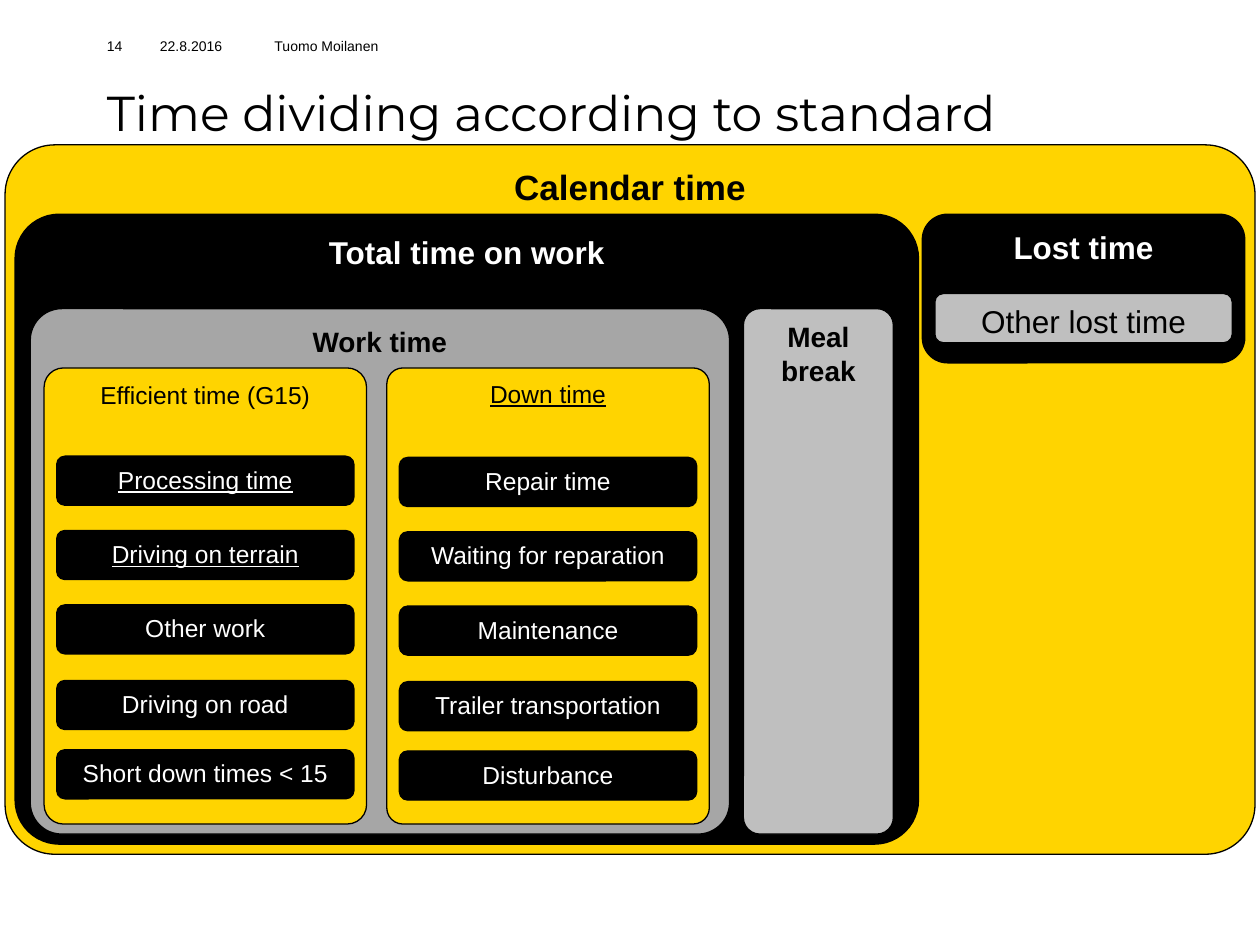
from pptx import Presentation
from pptx.dml.color import RGBColor
from pptx.enum.shapes import MSO_SHAPE
from pptx.enum.text import MSO_ANCHOR, PP_ALIGN
from pptx.util import Inches, Pt

ROUNDED = MSO_SHAPE.ROUNDED_RECTANGLE
TOP, MIDDLE = MSO_ANCHOR.TOP, MSO_ANCHOR.MIDDLE
CENTER, LEFT = PP_ALIGN.CENTER, PP_ALIGN.LEFT

BLACK = RGBColor(0x00, 0x00, 0x00)
WHITE = RGBColor(0xFF, 0xFF, 0xFF)
YELLOW = RGBColor(0xFF, 0xD4, 0x00)
GRAY = RGBColor(0xA6, 0xA6, 0xA6)
LIGHT_GRAY = RGBColor(0xBF, 0xBF, 0xBF)

COLUMN_TOP, COLUMN_WIDTH, COLUMN_HEIGHT = 2.92, 2.56, 3.62
BAR_WIDTH, BAR_HEIGHT, BAR_MARGIN = 2.36, 0.39, 0.1
BAR_TOPS = (3.62, 4.21, 4.8, 5.4, 5.95)


class TimeChart:
    body_font = "Arial"
    title_font = "Montserrat"

    def __init__(self, slide):
        self.slide = slide

    def set_text(self, shape, text, size, color, align, anchor=TOP,
                 font=body_font, bold=False, underline=False):
        frame = shape.text_frame
        frame.word_wrap = True
        frame.vertical_anchor = anchor
        paragraph = frame.paragraphs[0]
        paragraph.text = text
        paragraph.alignment = align
        paragraph.font.name = font
        paragraph.font.size = Pt(size)
        paragraph.font.color.rgb = color
        paragraph.font.bold = bold
        paragraph.font.underline = underline

    def label(self, text, left, top, width, height, size, **style):
        shape = self.slide.shapes.add_textbox(
            Inches(left), Inches(top), Inches(width), Inches(height))
        self.set_text(shape, text, size, BLACK, LEFT, **style)

    def box(self, text, left, top, width, height, fill, size, corner=0.17, **style):
        shape = self.slide.shapes.add_shape(
            ROUNDED, Inches(left), Inches(top), Inches(width), Inches(height))
        shape.adjustments[0] = corner
        shape.shadow.inherit = False
        shape.fill.solid()
        shape.fill.fore_color.rgb = fill
        shape.line.color.rgb = BLACK
        shape.line.width = Pt(0.75)
        color = WHITE if fill == BLACK else BLACK
        self.set_text(shape, text, size, color, CENTER, **style)

    def column(self, heading, left, corner, bars, underlined, shift=0):
        self.box(heading, left, COLUMN_TOP, COLUMN_WIDTH, COLUMN_HEIGHT,
                 YELLOW, 14, corner, underline=heading in underlined)
        for text, top in zip(bars, BAR_TOPS):
            self.box(text, left + BAR_MARGIN, top + shift, BAR_WIDTH, BAR_HEIGHT,
                     BLACK, 14, underline=text in underlined)


def main():
    presentation = Presentation()
    presentation.slide_width = Inches(10)
    presentation.slide_height = Inches(7.5)
    chart = TimeChart(presentation.slides.add_slide(presentation.slide_layouts[6]))

    chart.box("Calendar time", 0.04, 1.15, 9.92, 5.63, YELLOW, 20, 0.07, bold=True)
    chart.box("Total time on work", 0.12, 1.7, 7.17, 5, BLACK, 18, 0.07, bold=True)
    chart.box("Work time", 0.24, 2.45, 5.55, 4.17, GRAY, 16, 0.06, bold=True)

    chart.label("Time dividing according to standard", 0.75, 0.5, 8.97, 0.77, 28,
                anchor=MIDDLE, font=TimeChart.title_font)
    for text, left, width in (("14", 0.75, 0.42), ("22.8.2016", 1.17, 0.92),
                              ("Tuomo Moilanen", 2.08, 3.17)):
        chart.label(text, left, 0.25, width, 0.5, 8)

    chart.box("Lost time", 7.32, 1.7, 2.56, 1.18, BLACK, 18, bold=True)
    chart.box("Other lost time", 7.42, 2.33, BAR_WIDTH, BAR_HEIGHT, LIGHT_GRAY, 18)

    chart.column("Down time", 3.07, 0.05,
                 ("Repair time", "Waiting for reparation", "Maintenance",
                  "Trailer transportation", "Disturbance"),
                 underlined=("Down time",), shift=0.01)
    chart.column("Efficient time (G15)", 0.35, 0.06,
                 ("Processing time", "Driving on terrain", "Other work",
                  "Driving on road", "Short down times < 15"),
                 underlined=("Processing time", "Driving on terrain"))

    chart.box("Meal break", 5.9, 2.45, 1.19, 4.17, LIGHT_GRAY, 16, 0.11, bold=True)
    presentation.save("out.pptx")


if __name__ == "__main__":
    main()
